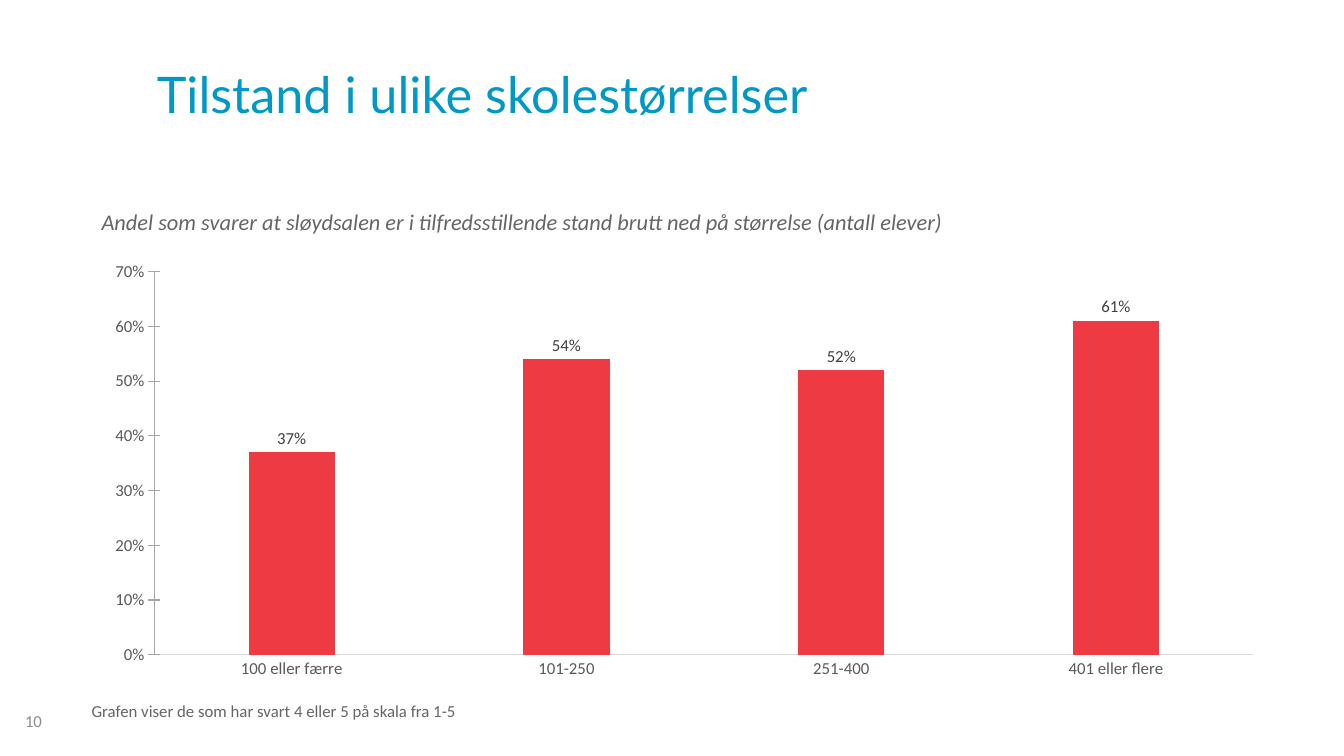
from pptx import Presentation
from pptx.chart.data import CategoryChartData
from pptx.dml.color import RGBColor
from pptx.enum.chart import XL_CHART_TYPE, XL_LABEL_POSITION, XL_TICK_MARK
from pptx.enum.text import MSO_ANCHOR
from pptx.util import Pt

COLUMN = XL_CHART_TYPE.COLUMN_CLUSTERED
ABOVE = XL_LABEL_POSITION.OUTSIDE_END
NONE, CROSS = XL_TICK_MARK.NONE, XL_TICK_MARK.CROSS
MIDDLE, BOTTOM = MSO_ANCHOR.MIDDLE, MSO_ANCHOR.BOTTOM
GREY = "656567"


def color(code):
    return RGBColor.from_string(code)


def write(text, left, top, width, height, size=12, face="Calibri",
          ink=GREY, italic=False, anchor=BOTTOM):
    box = slide.shapes.add_textbox(Pt(left), Pt(top), Pt(width), Pt(height))
    frame = box.text_frame
    frame.word_wrap = True
    frame.vertical_anchor = anchor
    run = frame.paragraphs[0].add_run()
    run.text = text
    run.font.size = Pt(size)
    run.font.name = face
    run.font.italic = italic
    run.font.color.rgb = color(ink)


deck = Presentation()
deck.slide_width, deck.slide_height = Pt(960), Pt(540)
slide = deck.slides.add_slide(deck.slide_layouts[6])

write("Tilstand i ulike skolestørrelser", 105, 21.6, 813.6, 90,
      size=36, face="Lato", ink="0098C6", anchor=MIDDLE)
write("Andel som svarer at sløydsalen er i tilfredsstillende stand "
      "brutt ned på størrelse (antall elever)",
      65.5, 121, 846.7, 50.4, size=16, italic=True)

# Share of satisfied schools by number of pupils
data = CategoryChartData(number_format="0%")
data.categories = ["100 eller færre", "101-250", "251-400", "401 eller flere"]
data.add_series("Andel", [0.37, 0.54, 0.52, 0.61])
chart = slide.shapes.add_chart(
    COLUMN, Pt(65.5), Pt(180.7), Pt(846.7), Pt(310.3), data).chart
chart.has_legend = False
chart.has_title = False
chart.font.size = Pt(10)
chart.font.name = "Calibri"

plot = chart.plots[0]
plot.gap_width = 219
plot.overlap = -27
plot.vary_by_categories = False
bars = plot.series[0]
bars.format.fill.solid()
bars.format.fill.fore_color.rgb = color("EE3A43")

labels = bars.data_labels
labels.show_value = True
labels.position = ABOVE
labels.number_format = "0%"
labels.number_format_is_linked = False

shares, sizes = chart.value_axis, chart.category_axis
shares.minimum_scale = 0
shares.maximum_scale = 0.7
shares.major_unit = 0.1
shares.tick_labels.number_format = "0%"
shares.tick_labels.number_format_is_linked = False
for axis, tick, line in [(sizes, NONE, "D9D9D9"), (shares, CROSS, "A6A6A6")]:
    axis.has_major_gridlines = False
    axis.major_tick_mark = tick
    axis.minor_tick_mark = NONE
    axis.format.line.color.rgb = color(line)
    axis.format.line.width = Pt(0.75)

for font, ink in [(labels.font, "404040"),
                  (sizes.tick_labels.font, "595959"),
                  (shares.tick_labels.font, "595959")]:
    font.size = Pt(12)
    font.name = "Calibri"
    font.color.rgb = color(ink)

write("10", 10.8, 500.4, 224, 28.8, ink="8C8C8C", anchor=MIDDLE)
write("Grafen viser de som har svart 4 eller 5 på skala fra 1-5",
      58.3, 468, 561, 50.4)

deck.save("out.pptx")
